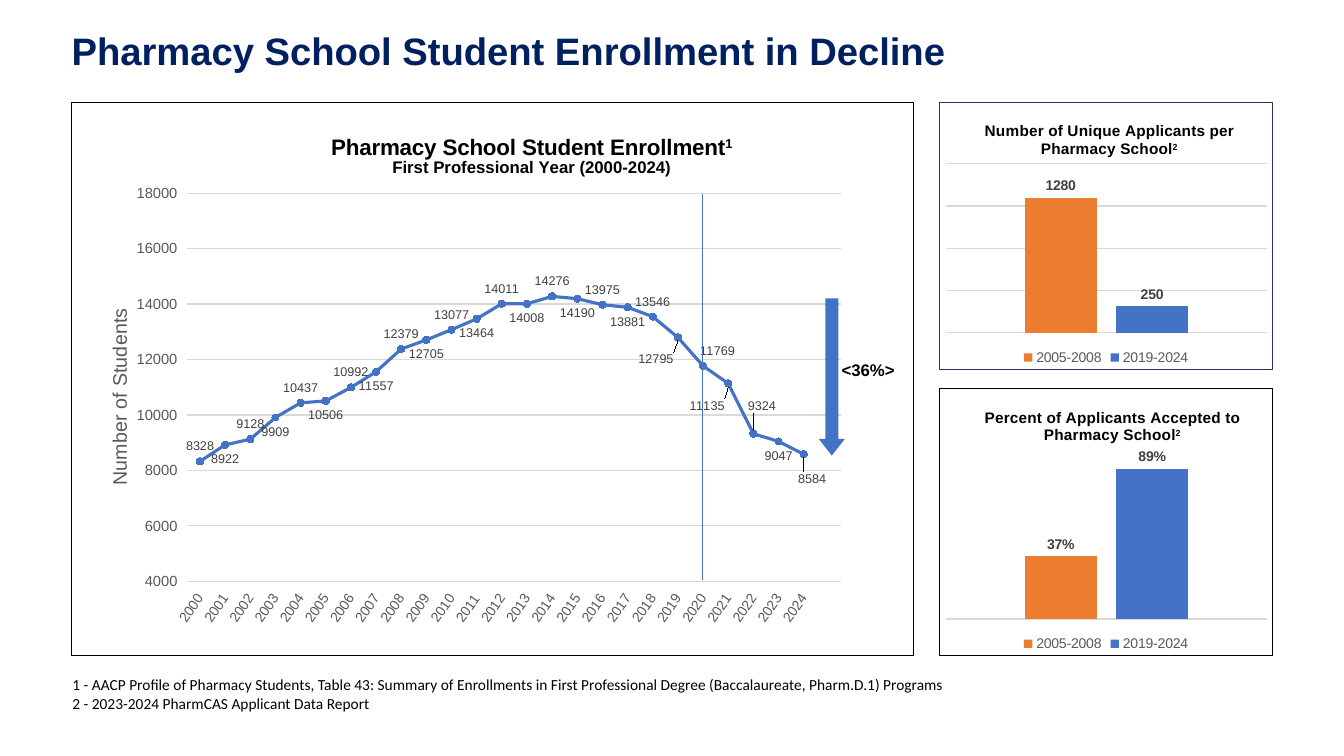
from dataclasses import dataclass
from typing import Any, Optional

from lxml.etree import SubElement
from pptx import Presentation
from pptx.chart.chart import Chart
from pptx.chart.data import CategoryChartData
from pptx.dml.color import RGBColor
from pptx.enum.chart import (XL_CHART_TYPE, XL_LABEL_POSITION, XL_LEGEND_POSITION,
                             XL_MARKER_STYLE, XL_TICK_LABEL_POSITION, XL_TICK_MARK)
from pptx.enum.shapes import MSO_CONNECTOR, MSO_SHAPE
from pptx.enum.text import MSO_ANCHOR, MSO_AUTO_SIZE, PP_ALIGN
from pptx.oxml import parse_xml
from pptx.oxml.ns import nsdecls, qn
from pptx.util import Inches, Pt

NAVY = RGBColor(0x00, 0x20, 0x60)
INDIGO = RGBColor(0x2C, 0x31, 0x68)
BLUE = RGBColor(0x44, 0x72, 0xC4)
ORANGE = RGBColor(0xED, 0x7D, 0x31)
BLACK = RGBColor(0x00, 0x00, 0x00)
DARK = RGBColor(0x40, 0x40, 0x40)
GRAY = RGBColor(0x59, 0x59, 0x59)
PALE = RGBColor(0xD9, 0xD9, 0xD9)

SLIDE_WIDTH, SLIDE_HEIGHT = Inches(13.33), Inches(7.5)
ENROLLMENT = [8328, 8922, 9128, 9909, 10437, 10506, 10992, 11557, 12379, 12705, 13077, 13464,
              14011, 14008, 14276, 14190, 13975, 13881, 13546, 12795, 11769, 11135, 9324, 9047, 8584]
LABEL_SHIFTS = {19: (-2.6, 1.3), 20: (1.7, 0), 21: (-2.5, 1.4), 22: (1, -2.3), 24: (1, 1.8)}
BELOW_AT_END = {24}


@dataclass(frozen=True)
class Area:
    """Percentages of the enclosing width and height."""
    left: float
    top: float
    width: float = 0
    height: float = 0

    def on_slide(self) -> tuple[int, int, int, int]:
        return (across(self.left), down(self.top), across(self.width), down(self.height))


@dataclass(frozen=True)
class Comparison:
    title: str
    area: Area
    values: tuple[float, float]
    maximum: float
    step: float
    number_format: str
    border: RGBColor


COMPARISONS = [
    Comparison("Number of Unique Applicants per Pharmacy School", Area(69.84, 13.47, 24.91, 35.47),
               (1280, 250), 1600, 400, "General", INDIGO),
    Comparison("Percent of Applicants Accepted to Pharmacy School", Area(69.84, 51.33, 24.91, 35.47),
               (0.37, 0.89), 1, 10, "0%", BLACK),
]


def across(percent: float) -> int:
    return round(SLIDE_WIDTH * percent / 100)


def down(percent: float) -> int:
    return round(SLIDE_HEIGHT * percent / 100)


def assign(target: Any, **values: Any) -> None:
    for name, value in values.items():
        setattr(target, name, value)


def style(font: Any, size: float, color: RGBColor, bold: bool = False, name: str = "Arial") -> None:
    assign(font, size=Pt(size), bold=bold, name=name)
    font.color.rgb = color


def write(para: Any, text: str, size: float, color: RGBColor, bold: bool = False,
          name: str = "Arial", superscript: str = "") -> None:
    for part, baseline in ((text, ""), (superscript, "30000")):
        if part:
            span = para.add_run()
            span.text = part
            style(span.font, size, color, bold, name)
            if baseline:
                span.font._element.set("baseline", baseline)


def layout(area: Area, target: str = "", absolute: bool = True) -> Any:
    element = parse_xml(f"<c:layout {nsdecls('c')}><c:manualLayout/></c:layout>")
    entries = {"layoutTarget": target}
    if absolute:
        entries |= {"xMode": "edge", "yMode": "edge"}
    entries |= {"x": area.left / 100, "y": area.top / 100}
    if area.width:
        entries |= {"w": area.width / 100, "h": area.height / 100}
    for name, value in entries.items():
        if value != "":
            SubElement(element[0], qn(f"c:{name}")).set("val", str(value))
    return element


def place(title: Any, area: Area) -> None:
    element = title._element
    for old in element.findall(qn("c:layout")):
        element.remove(old)
    element.find(qn("c:tx")).addnext(layout(area))


def frame_chart(chart: Chart, border: RGBColor, plot_area: Area) -> None:
    style(chart.font, 10, BLACK)
    outline = parse_xml(f'<c:spPr {nsdecls("c", "a")}><a:noFill/><a:ln w="9525"><a:solidFill>'
                        f'<a:srgbClr val="{border}"/></a:solidFill></a:ln></c:spPr>')
    chart.element.find(qn("c:chart")).addnext(outline)
    plot = chart.element.find(f".//{qn('c:plotArea')}")
    for old in plot.findall(qn("c:layout")):
        plot.remove(old)
    plot.insert(0, layout(plot_area, "inner"))
    grid = chart.value_axis.major_gridlines.format.line
    grid.color.rgb, grid.width = PALE, Pt(0.75)
    chart.plots[0].vary_by_categories = False


def add_enrollment(page: Any, area: Area) -> None:
    data = CategoryChartData()
    data.categories = [str(2000 + year) for year in range(len(ENROLLMENT))] + [""]
    data.add_series("Series 1", ENROLLMENT + [None])
    chart = page.shapes.add_chart(XL_CHART_TYPE.LINE_MARKERS, *area.on_slide(), data).chart
    chart.has_legend = False
    frame_chart(chart, BLACK, Area(13.8, 16.4, 77.6, 70.2))
    heading = chart.chart_title.text_frame
    write(heading.paragraphs[0], "Pharmacy School Student Enrollment", 16, BLACK, True, superscript="1")
    write(heading.add_paragraph(), "First Professional Year (2000-2024)", 12, BLACK, True)
    place(chart.chart_title, Area(30.5, 5))

    years, students = chart.category_axis, chart.value_axis
    assign(students, minimum_scale=4000, maximum_scale=18000, major_unit=2000)
    for axis, size in ((years, 10), (students, 10.5)):
        assign(axis, major_tick_mark=XL_TICK_MARK.NONE, minor_tick_mark=XL_TICK_MARK.NONE,
               tick_label_position=XL_TICK_LABEL_POSITION.LOW)
        style(axis.tick_labels.font, size, GRAY)
    years._element.find(qn("c:txPr")).find(qn("a:bodyPr")).set("rot", "-3300000")
    assign(years.format.line, width=Pt(0.75))
    years.format.line.color.rgb = PALE
    students.format.line.fill.background()
    caption = students.axis_title.text_frame
    write(caption.paragraphs[0], "Number of Students", 14, GRAY)
    caption._txBody.find(qn("a:bodyPr")).set("rot", "-5400000")
    place(students.axis_title, Area(3.8, 36.6))

    series = chart.plots[0].series[0]
    series.smooth = False
    series.format.line.color.rgb, series.format.line.width = BLUE, Pt(2.25)
    assign(series.marker, style=XL_MARKER_STYLE.CIRCLE, size=5)
    series.marker.format.fill.solid()
    series.marker.format.fill.fore_color.rgb = BLUE
    series.marker.format.line.color.rgb = BLUE
    assign(series.data_labels, show_value=True, position=XL_LABEL_POSITION.ABOVE)
    style(series.data_labels.font, 9, DARK)
    for index in range(len(ENROLLMENT)):
        below = index % 2 == 1 or index in BELOW_AT_END
        if below or index in LABEL_SHIFTS:
            label = series.points[index].data_label
            style(label.font, 9, DARK)
            label.position = XL_LABEL_POSITION.BELOW if below else XL_LABEL_POSITION.ABOVE
            if index in LABEL_SHIFTS:
                label._get_or_add_dLbl().insert(1, layout(Area(*LABEL_SHIFTS[index]), absolute=False))


def add_comparison(page: Any, item: Comparison) -> None:
    data = CategoryChartData(number_format=item.number_format)
    data.categories = ["1"]
    for name, value in zip(("2005-2008", "2019-2024"), item.values):
        data.add_series(name, [value])
    chart = page.shapes.add_chart(XL_CHART_TYPE.COLUMN_CLUSTERED, *item.area.on_slide(), data).chart
    frame_chart(chart, item.border, Area(2, 23, 96.2, 63.3))
    write(chart.chart_title.text_frame.paragraphs[0], item.title, 11, BLACK, True, superscript="2")
    place(chart.chart_title, Area(12.7, 5.6))
    chart.category_axis.visible = False
    assign(chart.value_axis, visible=False, minimum_scale=0, maximum_scale=item.maximum,
           major_unit=item.step)
    chart.has_legend = True
    assign(chart.legend, position=XL_LEGEND_POSITION.BOTTOM, include_in_layout=False)
    style(chart.legend.font, 10, GRAY)
    assign(chart.plots[0], gap_width=219, overlap=-27)
    for series, color in zip(chart.plots[0].series, (ORANGE, BLUE)):
        series.format.fill.solid()
        series.format.fill.fore_color.rgb = color
        assign(series.data_labels, show_value=True, position=XL_LABEL_POSITION.OUTSIDE_END,
               number_format=item.number_format, number_format_is_linked=False)
        style(series.data_labels.font, 10, DARK, True)


def add_text(page: Any, area: Area, lines: list[str], size: float, name: str,
             bold: bool = False, align: Optional[PP_ALIGN] = None) -> None:
    box = page.shapes.add_textbox(*area.on_slide()).text_frame
    box.word_wrap = True
    for index, line in enumerate(lines):
        para = box.add_paragraph() if index else box.paragraphs[0]
        para.alignment = align
        write(para, line, size, BLACK, bold, name)


def add_decline_marks(page: Any) -> None:
    divider = page.shapes.add_connector(MSO_CONNECTOR.STRAIGHT, across(52.29), down(25.6),
                                        across(52.29), down(76.67))
    divider.line.color.rgb, divider.line.width = BLUE, Pt(0.5)
    SubElement(divider._element.spPr, qn("a:effectLst"))
    arrow = page.shapes.add_shape(MSO_SHAPE.DOWN_ARROW, *Area(60.92, 39.47, 1.95, 20.8).on_slide())
    arrow.adjustments[0], arrow.adjustments[1] = 0.5, 0.64
    arrow.shadow.inherit = False
    arrow.fill.solid()
    arrow.fill.fore_color.rgb = BLUE
    arrow.line.fill.background()
    add_text(page, Area(61.67, 46.93, 5.85, 4), ["<36%>"], 12, "Arial", True, PP_ALIGN.CENTER)


def main() -> None:
    deck = Presentation()
    assign(deck, slide_width=SLIDE_WIDTH, slide_height=SLIDE_HEIGHT)
    page = deck.slides.add_slide(deck.slide_layouts[5])
    title = page.shapes.title
    title.left, title.top, title.width, title.height = Area(4.58, 3.6, 95.42, 6.8).on_slide()
    assign(title.text_frame, vertical_anchor=MSO_ANCHOR.BOTTOM, auto_size=MSO_AUTO_SIZE.NONE,
           word_wrap=True)
    para = title.text_frame.paragraphs[0]
    assign(para, alignment=PP_ALIGN.LEFT, line_spacing=0.9)
    write(para, "Pharmacy School Student Enrollment in Decline", 27.3, NAVY, True)
    add_enrollment(page, Area(5.25, 13.47, 62.79, 73.33))
    for item in COMPARISONS:
        add_comparison(page, item)
    add_decline_marks(page)
    add_text(page, Area(4.65, 88.67, 90.1, 6.27), [
        "1 - AACP Profile of Pharmacy Students, Table 43: Summary of Enrollments in First "
        "Professional Degree (Baccalaureate, Pharm.D.1) Programs",
        "2 - 2023-2024 PharmCAS Applicant Data Report"], 11, "Calibri")
    deck.save("out.pptx")


if __name__ == "__main__":
    main()
